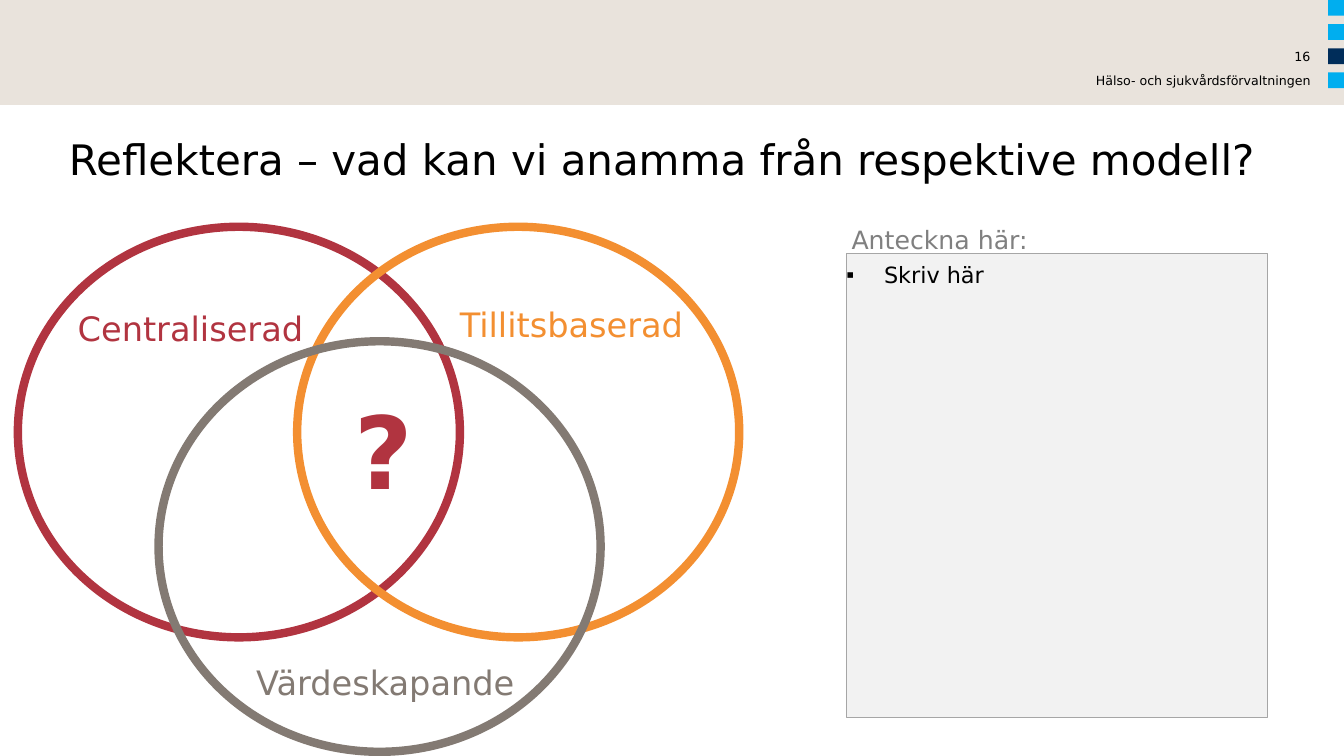
from lxml.etree import SubElement
from pptx import Presentation
from pptx.dml.color import RGBColor
from pptx.enum.shapes import MSO_SHAPE
from pptx.enum.text import MSO_ANCHOR, MSO_AUTO_SIZE, PP_ALIGN
from pptx.oxml.ns import qn
from pptx.util import Emu, Pt

EMU_PER_PX = 9525
FONT = "DejaVu Sans"

BLACK = RGBColor(0x00, 0x00, 0x00)
SAND = RGBColor(0xE9, 0xE3, 0xDC)
SKY = RGBColor(0x00, 0xAE, 0xEF)
NAVY = RGBColor(0x00, 0x2D, 0x5A)
RED = RGBColor(0xB1, 0x34, 0x40)
ORANGE = RGBColor(0xF3, 0x8F, 0x31)
TAUPE = RGBColor(0x83, 0x7A, 0x73)
GREY = RGBColor(0x80, 0x80, 0x80)
NOTE_FILL = RGBColor(0xF2, 0xF2, 0xF2)
NOTE_LINE = RGBColor(0xA6, 0xA6, 0xA6)


def px(length):
    return Emu(length * EMU_PER_PX)


def place(shape, left, top, width, height):
    shape.left, shape.top = px(left), px(top)
    shape.width, shape.height = px(width), px(height)


def write(shape, text, size, color, align=PP_ALIGN.LEFT, bold=False):
    frame = shape.text_frame
    frame.text = text
    frame.word_wrap = True
    frame.auto_size = MSO_AUTO_SIZE.NONE
    frame.vertical_anchor = MSO_ANCHOR.TOP
    frame.margin_left = frame.margin_right = 0
    frame.margin_top = frame.margin_bottom = 0
    paragraph = frame.paragraphs[0]
    paragraph.alignment = align
    paragraph.space_before = Pt(0)
    font = paragraph.runs[0].font
    font.name = FONT
    font.size = Pt(size)
    font.bold = bold
    font.color.rgb = color
    return paragraph


def add_label(slide, box, text, size, color, **style):
    label = slide.shapes.add_textbox(*map(px, box))
    write(label, text, size, color, **style)


def add_block(slide, box, color):
    block = slide.shapes.add_shape(MSO_SHAPE.RECTANGLE, *map(px, box))
    block.shadow.inherit = False
    block.fill.solid()
    block.fill.fore_color.rgb = color
    block.line.fill.background()


def add_circle(slide, left, top, color):
    circle = slide.shapes.add_shape(MSO_SHAPE.OVAL, px(left), px(top), px(421), px(391))
    circle.shadow.inherit = False
    circle.fill.background()
    circle.line.color.rgb = color
    circle.line.width = Pt(6)


def add_header(slide):
    add_block(slide, (0, 0, 1280, 100), SAND)
    for index, color in enumerate((SKY, SKY, NAVY, SKY)):
        add_block(slide, (1265, index * 23, 15, 15), color)
    for top, text in ((69, "Hälso- och sjukvårdsförvaltningen"), (47, "16")):
        add_label(slide, (896, top, 352, 14), text, 9, BLACK, align=PP_ALIGN.RIGHT)


def fill_title(slide):
    title = slide.shapes.title
    place(title, 0, 127, 1262, 87)
    text = "Reflektera – vad kan vi anamma från respektive modell?"
    write(title, text, 30, BLACK, align=PP_ALIGN.CENTER)


def fill_notes(slide):
    notes = slide.placeholders[1]
    place(notes, 806, 241, 401, 442)
    notes.fill.solid()
    notes.fill.fore_color.rgb = NOTE_FILL
    notes.line.color.rgb = NOTE_LINE
    notes.line.width = Pt(0.75)
    paragraph = write(notes, "Skriv här", 16, BLACK)
    paragraph.line_spacing = 1.3
    paragraph.space_after = Pt(2)
    properties = paragraph._p.get_or_add_pPr()
    properties.set("marL", str(px(36)))
    properties.set("indent", str(-px(36)))
    SubElement(properties, qn("a:buChar")).set("char", "▪")


def main():
    presentation = Presentation()
    presentation.slide_width, presentation.slide_height = px(1280), px(720)
    slide = presentation.slides.add_slide(presentation.slide_layouts[1])

    add_header(slide)
    fill_title(slide)
    for left, top, color in ((17, 216, RED), (283, 216, ORANGE), (151, 325, TAUPE)):
        add_circle(slide, left, top, color)
    fill_notes(slide)

    add_label(slide, (244, 630, 280, 87), "Värdeskapande", 24, TAUPE)
    add_label(slide, (438, 289, 520, 87), "Tillitsbaserad", 24, ORANGE)
    add_label(slide, (74, 293, 520, 87), "Centraliserad", 24, RED)
    add_label(slide, (811, 214, 344, 27), "Anteckna här:", 18, GREY)
    add_label(slide, (338, 370, 56, 106), "?", 72, RED, bold=True)

    presentation.save("out.pptx")


if __name__ == "__main__":
    main()
